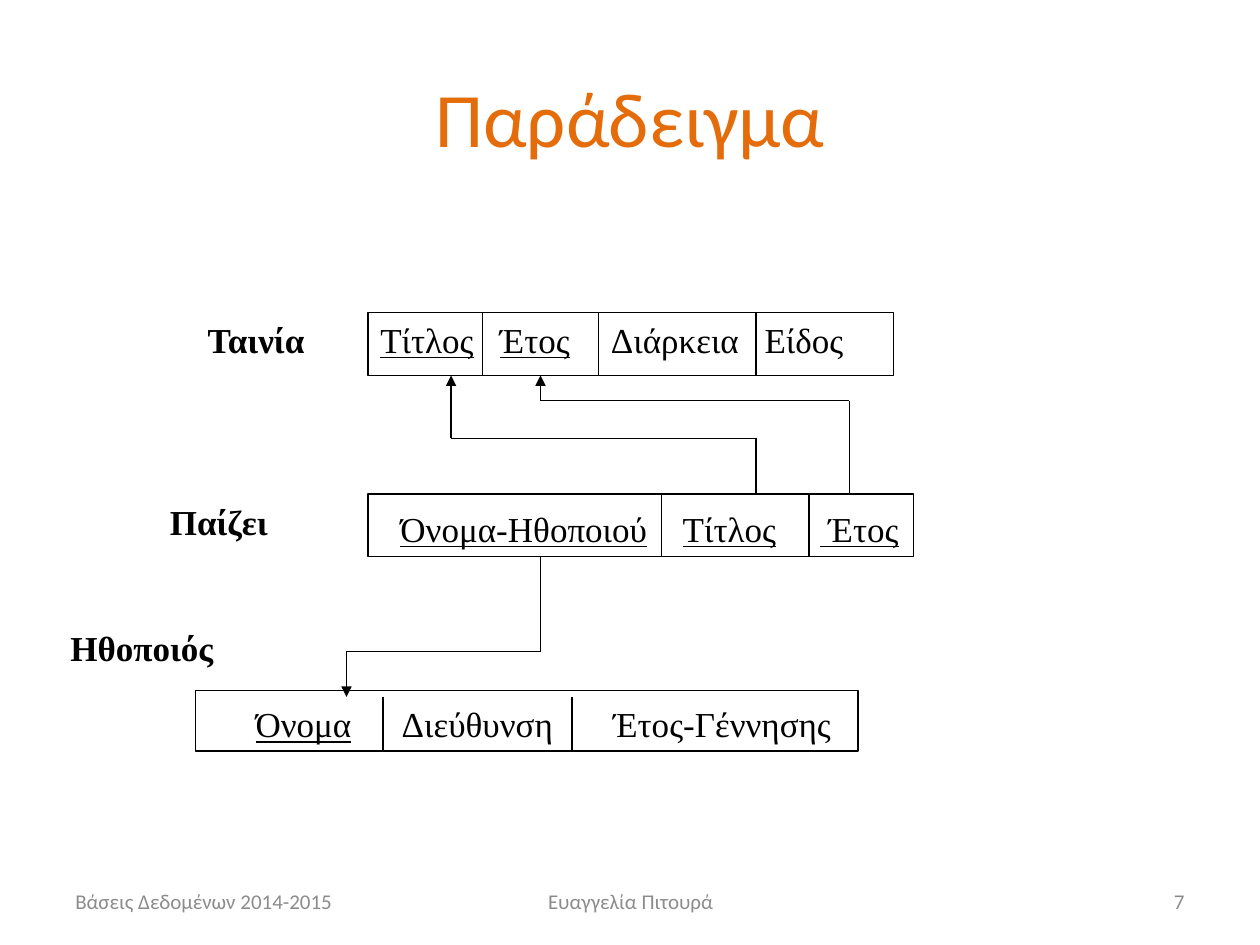
import itertools

import pptx
import pptx.dml.color
import pptx.enum.shapes
import pptx.enum.text
import pptx.oxml
import pptx.oxml.ns
import pptx.util
from pptx.util import Inches

SERIF, SANS = "Times New Roman", "Calibri"
BLACK, ORANGE, GREY = "000000", "E46C0A", "8C8C8C"
ALIGN = pptx.enum.text.PP_ALIGN
ANCHOR = pptx.enum.text.MSO_ANCHOR

# Relations: name and its place, frame, dividers (x, top, bottom),
# text place and attributes (text, is key, x of the text)
relations = [
    dict(name="Ταινία", name_at=(1.55, 2.48, 1.17), frame=(2.92, 2.48, 4.17, 0.5),
         dividers=(3.83, 4.75, 6), divider_top=2.48, text_at=(2.92, 2.48, 7.67),
         attributes=[("Τίτλος", True, 3.02), ("Έτος", True, 3.97),
                     ("Διάρκεια", False, 4.85), ("Είδος", False, 6.07)]),
    dict(name="Παίζει", name_at=(1.25, 3.92, 1.5), frame=(2.92, 3.92, 4.33, 0.5),
         dividers=(5.25, 6.42), divider_top=3.92, text_at=(3.08, 3.98, 5.67),
         attributes=[("Όνομα-Ηθοποιού", True, 3.18), ("Τίτλος", True, 5.42),
                     (" Έτος", True, 6.51)]),
    dict(name="Ηθοποιός", name_at=(0.46, 4.92, 1.48), frame=(1.55, 5.48, 5.26, 0.48),
         dividers=(3.04, 4.54), divider_top=5.53, text_at=(1.93, 5.53, 7.67),
         attributes=[("Όνομα", True, 2.03), ("Διεύθυνση", False, 3.19),
                     ("Έτος-Γέννησης", False, 4.87)]),
]

# Foreign keys: corner points, arrowhead at the last one
foreign_keys = [
    [(6, 3.92), (6, 3.48), (3.58, 3.48), (3.58, 2.98)],
    [(6.74, 3.92), (6.74, 3.18), (4.29, 3.18), (4.29, 2.98)],
    [(4.29, 4.42), (4.29, 5.17), (2.75, 5.17), (2.75, 5.53)],
]

footers = [
    ("Βάσεις Δεδομένων 2014-2015", (0.5, 6.95, 2.33, 0.4), ALIGN.LEFT),
    ("Ευαγγελία Πιτουρά", (3.42, 6.95, 3.17, 0.4), ALIGN.CENTER),
    ("7", (7.17, 6.95, 2.33, 0.4), ALIGN.RIGHT),
]
ROW_HEIGHT = 0.43
INSET = 0.1

deck = pptx.Presentation()
deck.slide_width, deck.slide_height = Inches(10), Inches(7.5)
slide = deck.slides.add_slide(deck.slide_layouts[6])


def color(value):
    return pptx.dml.color.RGBColor.from_string(value)


def add_text(pieces, at, font=SERIF, size=20, fill=BLACK, bold=False,
             align=ALIGN.LEFT, anchor=ANCHOR.TOP):
    """Write (text, underlined) pieces in one paragraph."""
    box = slide.shapes.add_textbox(*map(Inches, at))
    frame = box.text_frame
    frame.word_wrap, frame.vertical_anchor = True, anchor
    paragraph = frame.paragraphs[0]
    paragraph.alignment = align
    for text, underlined in pieces:
        run = paragraph.add_run()
        run.text = text
        run.font.name, run.font.size = font, pptx.util.Pt(size)
        run.font.bold, run.font.underline = bold, underlined
        run.font.color.rgb = color(fill)
    return paragraph


def set_tabs(paragraph, stops):
    properties = paragraph._p.get_or_add_pPr()
    tabs = pptx.oxml.ns.qn("a:tabLst")
    tab_list = properties.makeelement(tabs, {})
    properties.append(tab_list)
    for stop in stops:
        tab_list.append(tab_list.makeelement(
            pptx.oxml.ns.qn("a:tab"), {"pos": str(Inches(stop)), "algn": "l"}))


def add_line(start, end, arrow=False):
    line = slide.shapes.add_connector(
        pptx.enum.shapes.MSO_CONNECTOR.STRAIGHT, *map(Inches, (*start, *end)))
    line.line.color.rgb = color(BLACK)
    line.line.width = pptx.util.Pt(0.75)
    properties = line._element.spPr
    if arrow:
        outline = line.line._get_or_add_ln()
        outline.append(outline.makeelement(
            pptx.oxml.ns.qn("a:tailEnd"), {"type": "triangle"}))
    properties.append(properties.makeelement(pptx.oxml.ns.qn("a:effectLst"), {}))


# Title
add_text([("Παράδειγμα", False)], (0.5, 0.3, 9, 1.25), font=SANS, size=44,
         fill=ORANGE, align=ALIGN.CENTER, anchor=ANCHOR.MIDDLE)

# Relation schemas
for relation in relations:
    add_text([(relation["name"], False)], (*relation["name_at"], ROW_HEIGHT), bold=True)

    pieces = []
    for text, is_key, _ in relation["attributes"]:
        if pieces:
            pieces.append(("\t", False))
        pieces.append((text, is_key))
    row = add_text(pieces, (*relation["text_at"], ROW_HEIGHT))
    text_left = relation["text_at"][0] + INSET
    set_tabs(row, [x - text_left for _, _, x in relation["attributes"][1:]])

    left, top, width, height = relation["frame"]
    border = slide.shapes.add_shape(pptx.enum.shapes.MSO_SHAPE.RECTANGLE,
                                    *map(Inches, relation["frame"]))
    border.shadow.inherit = False
    border.fill.background()
    border.line.color.rgb = color(BLACK)
    border.line.width = pptx.util.Pt(0.75)
    for x in relation["dividers"]:
        add_line((x, relation["divider_top"]), (x, top + height))

# Foreign key arrows
for corners in foreign_keys:
    for start, end in itertools.pairwise(corners):
        add_line(start, end, arrow=end == corners[-1])

# Footer
for text, at, align in footers:
    add_text([(text, False)], at, font=SANS, size=12, fill=GREY,
             align=align, anchor=ANCHOR.MIDDLE)

deck.save("out.pptx")
